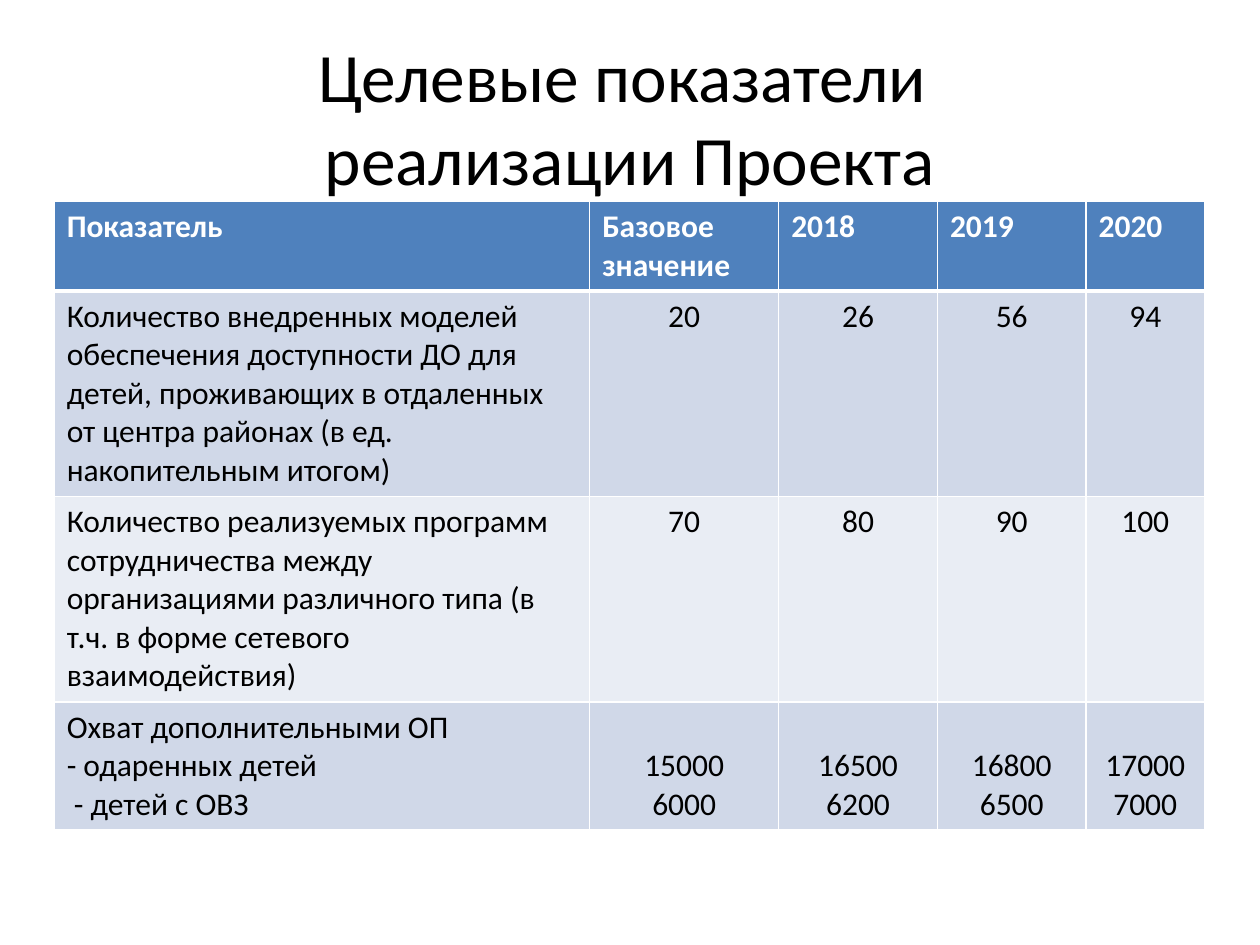
from lxml import etree
from pptx import Presentation
from pptx.dml.color import RGBColor
from pptx.enum.text import MSO_ANCHOR, MSO_AUTO_SIZE, PP_ALIGN
from pptx.oxml.ns import qn
from pptx.util import Inches, Pt

CENTER, LEFT = PP_ALIGN.CENTER, PP_ALIGN.LEFT
TOP, MIDDLE, BOTTOM = MSO_ANCHOR.TOP, MSO_ANCHOR.MIDDLE, MSO_ANCHOR.BOTTOM
NO_AUTOFIT = MSO_AUTO_SIZE.NONE

FONT = "Calibri"
BLACK, WHITE = "000000", "FFFFFF"
HEADER_FILL = "4F81BD"
BAND_FILLS = ["D0D8E8", "E9EDF4"]

COLUMN_WIDTHS = [4.25, 1.5, 1.26, 1.18, 0.94]
ROW_HEIGHTS = [0.71, 1.63, 1.63, 1.01]
INDICATORS = [
    ["Показатель", "Базовое значение", "2018", "2019", "2020"],
    ["Количество внедренных моделей обеспечения доступности ДО для детей, "
     "проживающих в отдаленных от центра районах (в ед. накопительным итогом)",
     "20", "26", "56", "94"],
    ["Количество реализуемых программ сотрудничества между организациями "
     "различного типа (в т.ч. в форме сетевого взаимодействия)",
     "70", "80", "90", "100"],
    ["Охват дополнительными ОП\n- одаренных детей\n - детей с ОВЗ",
     "15000\n6000", "16500\n6200", "16800\n6500", "17000\n7000"],
]


def color(hex_string):
    return RGBColor.from_string(hex_string)


def format_paragraphs(text_frame, size, hex_color, alignment, bold=False):
    for paragraph in text_frame.paragraphs:
        paragraph.alignment = alignment
        font = paragraph.font
        font.name, font.size, font.bold = FONT, Pt(size), bold
        font.color.rgb = color(hex_color)


def set_title(slide, text):
    title = slide.shapes.title
    title.left, title.top = Inches(0.5), Inches(0.3)
    title.width, title.height = Inches(9), Inches(1.25)
    text_frame = title.text_frame
    text_frame.text = text
    text_frame.auto_size = NO_AUTOFIT
    text_frame.vertical_anchor = MIDDLE
    format_paragraphs(text_frame, 39.6, BLACK, CENTER)


def add_borders(cell, bottom_width, top_width):
    properties = cell._tc.get_or_add_tcPr()
    widths = {"a:lnL": 1, "a:lnR": 1, "a:lnT": top_width, "a:lnB": bottom_width}
    for tag, width in widths.items():
        line = etree.SubElement(properties, qn(tag), w=str(Pt(width)))
        fill = etree.SubElement(line, qn("a:solidFill"))
        etree.SubElement(fill, qn("a:srgbClr"), val=WHITE)


def format_cell(cell, text, row, column):
    is_header = row == 0
    cell.text = text
    # The header is set off by a thicker rule
    add_borders(cell, 3 if is_header else 1, 3 if row == 1 else 1)
    cell.fill.solid()
    cell.fill.fore_color.rgb = color(
        HEADER_FILL if is_header else BAND_FILLS[(row - 1) % 2])
    is_value = column > 0 and not is_header
    # Two-line values line up with the last lines of their label
    cell.vertical_anchor = BOTTOM if is_value and "\n" in text else TOP
    format_paragraphs(cell.text_frame, 18, WHITE if is_header else BLACK,
                      CENTER if is_value else LEFT, is_header)


def add_indicator_table(slide):
    frame = slide.shapes.add_table(
        len(ROW_HEIGHTS), len(COLUMN_WIDTHS), Inches(0.43), Inches(1.6),
        Inches(sum(COLUMN_WIDTHS)), Inches(sum(ROW_HEIGHTS)))
    table = frame.table
    for column, width in zip(table.columns, COLUMN_WIDTHS):
        column.width = Inches(width)
    for row, height in zip(table.rows, ROW_HEIGHTS):
        row.height = Inches(height)
    for row, texts in enumerate(INDICATORS):
        for column, text in enumerate(texts):
            format_cell(table.cell(row, column), text, row, column)


def main():
    presentation = Presentation()
    presentation.slide_width, presentation.slide_height = Inches(10), Inches(7.5)
    # Layout 5 is "Title Only"
    slide = presentation.slides.add_slide(presentation.slide_layouts[5])
    set_title(slide, "Целевые показатели \vреализации Проекта")
    add_indicator_table(slide)
    presentation.save("out.pptx")


if __name__ == "__main__":
    main()
